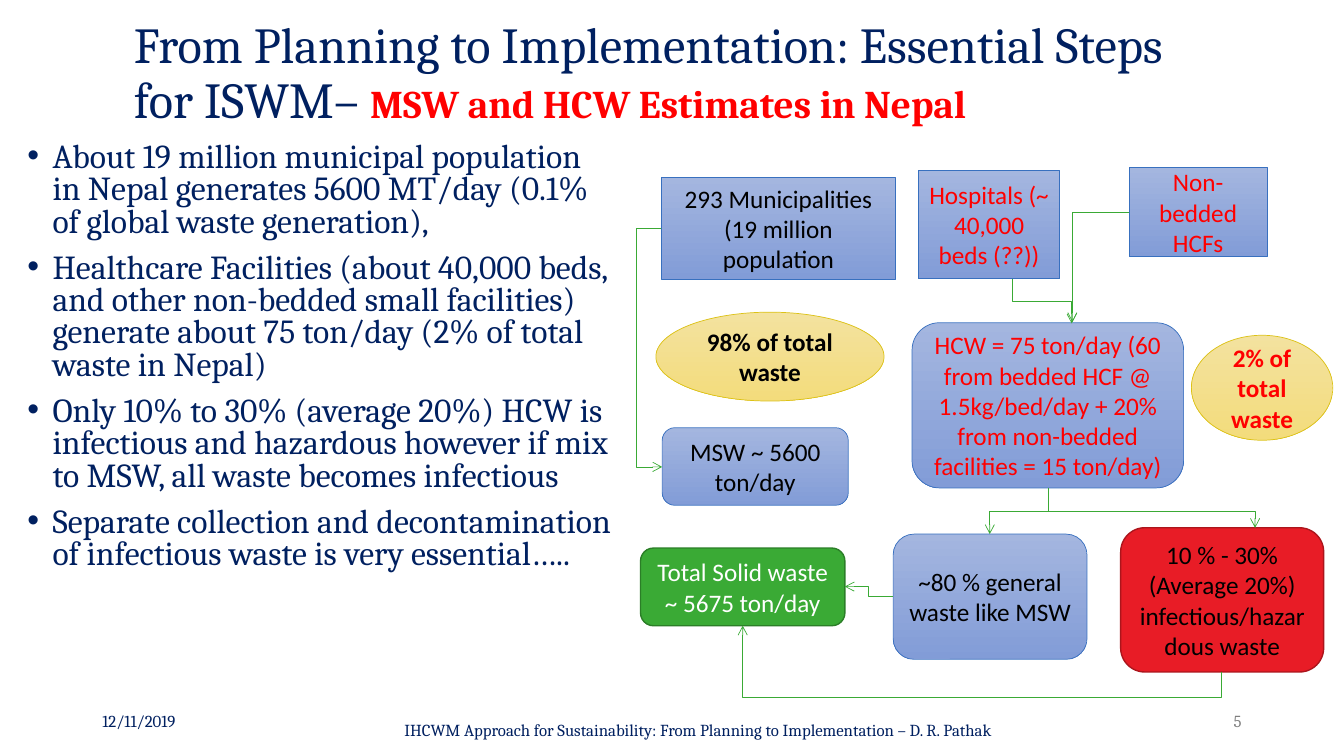
from dataclasses import dataclass

from lxml import etree
from pptx import Presentation
from pptx.dml.color import RGBColor
from pptx.enum.shapes import MSO_CONNECTOR, MSO_SHAPE
from pptx.enum.text import MSO_ANCHOR, PP_ALIGN
from pptx.oxml.ns import qn
from pptx.util import Pt

RECT, ROUND, OVAL = MSO_SHAPE.RECTANGLE, MSO_SHAPE.ROUNDED_RECTANGLE, MSO_SHAPE.OVAL
ELBOW = MSO_CONNECTOR.ELBOW
TOP, MIDDLE = MSO_ANCHOR.TOP, MSO_ANCHOR.MIDDLE
LEFT, CENTER, RIGHT = PP_ALIGN.LEFT, PP_ALIGN.CENTER, PP_ALIGN.RIGHT


@dataclass(frozen=True)
class Theme:
    navy: str = "002060"
    black: str = "000000"
    white: str = "FFFFFF"
    alert: str = "FF0000"
    gray: str = "7F7F7F"
    arrow: str = "3AAA35"
    # Box styles: fill colours (two make a gradient), line colour, line width
    blue: tuple = (("A4B6DF", "829CD7"), "3870BF", 0.5)
    yellow: tuple = (("F3E29F", "F3DC7C"), "DCC217", 0.5)
    red: tuple = (("E81C26",), "AC151C", 1)
    green: tuple = (("3AAA35",), "2B7E27", 1)
    serif: str = "Cambria"
    sans: str = "Calibri"
    title: int = 36
    subtitle: int = 28
    body: int = 24
    box: int = 18
    footer: int = 12


T = Theme()

BULLETS = [
    "About 19 million municipal population in Nepal generates 5600 MT/day "
    "(0.1% of global waste generation),",
    "Healthcare Facilities (about 40,000 beds, and other non-bedded small facilities) "
    "generate about 75 ton/day (2% of total waste in Nepal)",
    "Only 10% to 30% (average 20%) HCW is infectious and hazardous however if mix to MSW, "
    "all waste becomes infectious",
    "Separate collection and decontamination of infectious waste is very essential…..",
]

BOXES = [
    (RECT, (472.5, 127, 167, 72.5), T.blue, T.black, "293 Municipalities (19 million population"),
    (ROUND, (473, 305.5, 133, 55.5), T.blue, T.black, "MSW ~ 5600 ton/day"),
    (RECT, (656, 121.5, 101, 77.5), T.blue, T.alert, "Hospitals (~ 40,000 beds (??))"),
    (ROUND, (651.5, 230.5, 194, 118), T.blue, T.alert,
     "HCW = 75 ton/day (60 from bedded HCF @ 1.5kg/bed/day + 20% "
     "from non-bedded facilities = 15 ton/day)"),
    (ROUND, (638, 381.5, 138.5, 89.5), T.blue, T.black, "~80 % general waste like MSW"),
    (ROUND, (800.5, 377, 145, 103), T.red, T.black,
     "10 % - 30% (Average 20%) infectious/hazardous waste"),
    (RECT, (806.5, 119.5, 98.5, 64), T.blue, T.alert, "Non-bedded HCFs"),
    (OVAL, (468.5, 223, 163, 63.5), T.yellow, T.black, "98% of total waste"),
    (OVAL, (851, 239.5, 101, 75), T.yellow, T.alert, "2% of total waste"),
    (ROUND, (457.5, 391.5, 146, 55.5), T.green, T.white, "Total Solid waste ~ 5675 ton/day"),
]

# Begin, end, and where the middle leg runs: x for "h", y for "v", None for one bend
ARROWS = [
    ((472.5, 163), (473, 333.5), "h", 455),
    ((723, 199), (765.5, 231), "v", 215.5),
    ((806.5, 151.5), (766, 230), "h", None),
    ((749, 348.5), (707, 381.5), "v", 365),
    ((749, 353), (896.5, 377), "v", 365),
    ((872.5, 480), (530.5, 447), "v", 498.5),
    ((638, 426), (603.5, 419), "h", 620.5),
]


def rgb(code):
    return RGBColor.from_string(code)


def add_run(p, text, font=T.serif, size=T.footer, color=T.navy, bold=False):
    r = p.add_run()
    r.text = text
    r.font.name, r.font.size, r.font.bold = font, Pt(size), bold
    r.font.color.rgb = rgb(color)


def write(sp, text, align=LEFT, anchor=MIDDLE, **fmt):
    """Set the first paragraph of a shape and return it."""
    tf = sp.text_frame
    tf.word_wrap = True
    tf.vertical_anchor = anchor
    p = tf.paragraphs[0]
    p.alignment = align
    add_run(p, text, **fmt)
    return p


def add_text(slide, place, text, **fmt):
    sp = slide.shapes.add_textbox(*map(Pt, place))
    return write(sp, text, **fmt)


def add_bullets(slide, place, items):
    tf = slide.shapes.add_textbox(*map(Pt, place)).text_frame
    tf.word_wrap = True
    tf.vertical_anchor = TOP
    for i, item in enumerate(items):
        p = tf.add_paragraph() if i else tf.paragraphs[0]
        pPr = p._p.get_or_add_pPr()
        pPr.set("marL", str(Pt(18)))
        pPr.set("indent", str(Pt(-18)))
        etree.SubElement(pPr, qn("a:buFont"), typeface="Arial")
        etree.SubElement(pPr, qn("a:buChar"), char="•")
        p.line_spacing = 0.8
        p.space_before = Pt(10 if i else 0)
        add_run(p, item, size=T.body)


def add_box(slide, kind, place, style, color, text):
    sp = slide.shapes.add_shape(kind, *map(Pt, place))
    sp.shadow.inherit = False
    fills, line, width = style
    if len(fills) > 1:
        sp.fill.gradient()
        sp.fill.gradient_angle = 270
        for stop, code in zip(sp.fill.gradient_stops, fills):
            stop.color.rgb = rgb(code)
    else:
        sp.fill.solid()
        sp.fill.fore_color.rgb = rgb(fills[0])
    sp.line.color.rgb = rgb(line)
    sp.line.width = Pt(width)
    write(sp, text, align=CENTER, font=T.sans, size=T.box, color=color, bold=kind == OVAL)


def add_arrow(slide, begin, end, axis, mid):
    """Elbow arrow that leaves begin along axis; a vertical one is a turned horizontal one."""
    (x1, y1), (x2, y2) = begin, end
    dx, dy, turn = x2 - x1, y2 - y1, 0
    ratio = None
    if mid is not None:
        ratio = (mid - x1) / dx if axis == "h" else (mid - y1) / dy
    if axis == "v":
        turn = 90 if dy > 0 else 270
        dx, dy = abs(dy), (-dx if dy > 0 else dx)
    cx, cy = (x1 + x2) / 2, (y1 + y2) / 2
    corners = (cx - dx / 2, cy - dy / 2, cx + dx / 2, cy + dy / 2)
    line = slide.shapes.add_connector(ELBOW, *map(Pt, corners))
    line.line.color.rgb = rgb(T.arrow)
    line.line.width = Pt(0.5)
    etree.SubElement(line.line._get_or_add_ln(), qn("a:tailEnd"), type="arrow")
    spPr = line._element.spPr
    etree.SubElement(spPr, qn("a:effectLst"))
    if turn:
        spPr.find(qn("a:xfrm")).set("rot", str(turn * 60000))
    geom = spPr.find(qn("a:prstGeom"))
    if ratio is None:
        geom.set("prst", "bentConnector2")
    else:
        guides = geom.find(qn("a:avLst"))
        etree.SubElement(guides, qn("a:gd"), name="adj1", fmla=f"val {round(ratio * 100000)}")


def main():
    prs = Presentation()
    prs.slide_width, prs.slide_height = Pt(960), Pt(540)
    slide = prs.slides.add_slide(prs.slide_layouts[6])

    title = add_text(slide, (88.5, 8, 797, 90.5),
                     "From Planning to Implementation: Essential Steps for ISWM– ", size=T.title)
    title.line_spacing = 0.9
    add_run(title, "MSW and HCW Estimates in Nepal", size=T.subtitle, color=T.alert, bold=True)
    add_bullets(slide, (12.5, 98.5, 432.5, 399), BULLETS)

    for box in BOXES:
        add_box(slide, *box)
    for arrow in ARROWS:
        add_arrow(slide, *arrow)

    add_text(slide, (66, 500.5, 94.5, 29), "12/11/2019")
    add_text(slide, (813.5, 500.5, 80.5, 29), "5", align=RIGHT, color=T.gray)
    add_text(slide, (252.5, 507, 492.5, 29),
             "IHCWM Approach for Sustainability: From Planning to Implementation – D. R. Pathak",
             align=CENTER)
    prs.save("out.pptx")


if __name__ == "__main__":
    main()
